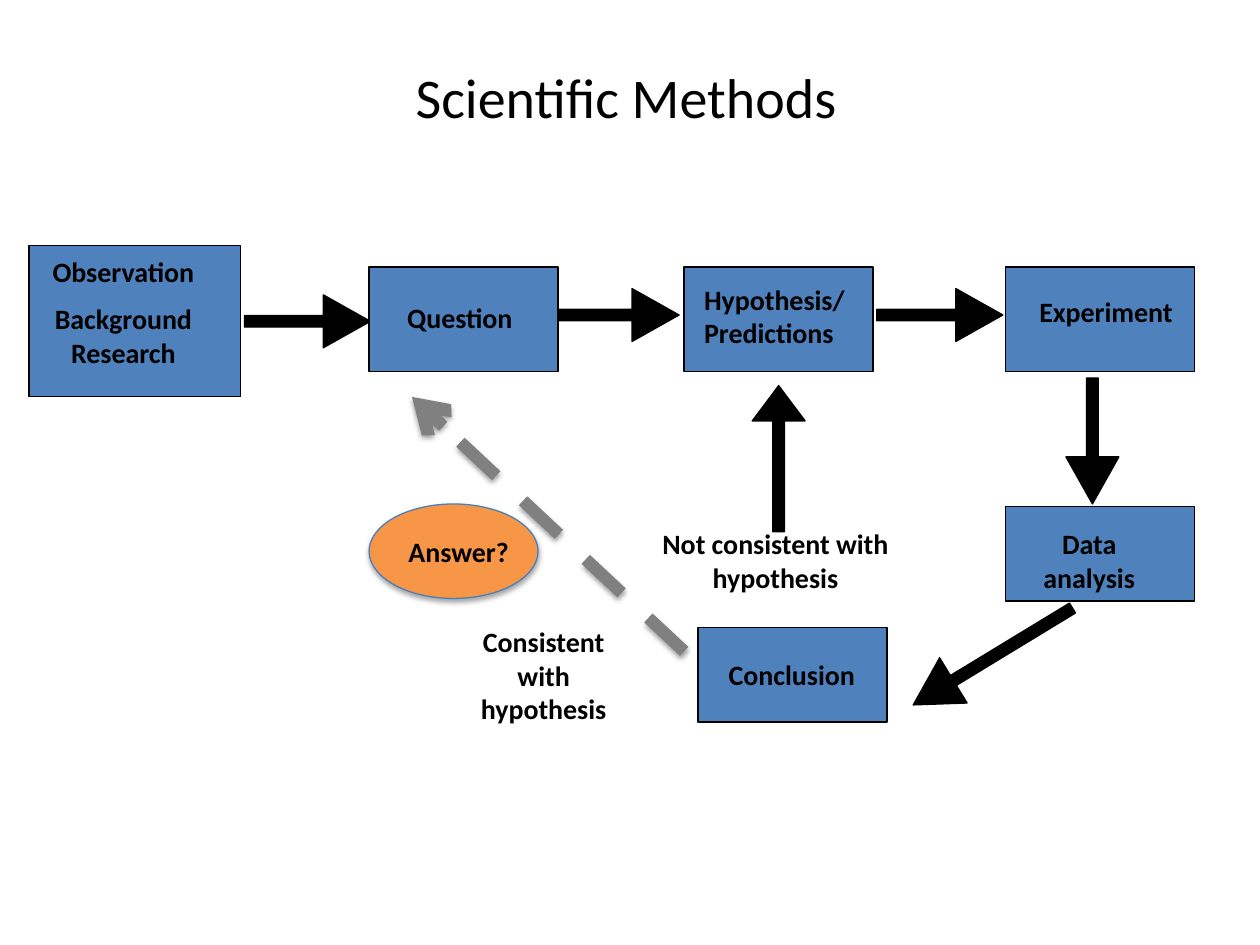
from lxml import etree
from pptx import Presentation
from pptx.dml.color import RGBColor
from pptx.enum import dml, shapes, text
from pptx.oxml import ns
from pptx import util as u

PX = 9144
FONT = "Calibri"
COLORS = {"ink": "000000", "stage": "4F81BD", "answer": "F79646",
          "answer_edge": "4B7EBC", "loop": "808080"}
LEFT, CENTER = text.PP_ALIGN.LEFT, text.PP_ALIGN.CENTER

STAGES = [
    ((23, 195, 168, 120), ["Observation", "Background Research"], (0, 2, 150, 104), CENTER),
    ((293, 212, 150, 83), ["Question"], (-3, 22, 150, 37), CENTER),
    ((543, 212, 150, 83), ["Hypothesis/Predictions"], (6, 7, 150, 64), LEFT),
    ((798, 212, 150, 83), ["Experiment"], (17, 17, 150, 37), LEFT),
    ((798, 402, 150, 75), ["Data analysis"], (0, 11, 133, 64), CENTER),
    ((554, 498, 150, 75), ["Conclusion"], (8, 19, 133, 37), CENTER),
]
ARROWS = [
    ((194, 234, 100, 42), 0, 0.889),
    ((439, 229, 100, 42), 0, 0.889),
    ((696, 229, 100, 42), 0, 0.889),
    ((817, 329, 100, 42), 90, 0.889),
    ((714, 500, 148, 42), 148.7, 0.889),
    ((560, 343, 116, 42), 270, 0.667),
]
CAPTIONS = [
    ((474, 413, 283, 64), "Not consistent with hypothesis"),
    ((351, 491, 161, 91), "Consistent with hypothesis"),
]


def emu(lengths):
    """Turn px lengths into EMU."""
    return [u.Emu(length * PX) for length in lengths]


def inside(box, part):
    """Place a part relative to the corner of its box."""
    return box[0] + part[0], box[1] + part[1], part[2], part[3]


def color(name):
    """Look up a named colour."""
    return RGBColor.from_string(COLORS[name])


def add_label(page, box, lines, align=CENTER, size=16, bold=True):
    """Add a text box with one paragraph for each line."""
    frame = page.shapes.add_textbox(*emu(box)).text_frame
    frame.word_wrap = True
    frame.auto_size = text.MSO_AUTO_SIZE.SHAPE_TO_FIT_TEXT
    for index, line in enumerate(lines):
        para = frame.add_paragraph() if index else frame.paragraphs[0]
        para.alignment = align
        if index:
            para.space_before = u.Pt(size / 2)
        span = para.add_run()
        span.text = line
        span.font.name, span.font.size, span.font.bold = FONT, u.Pt(size), bold
        span.font.color.rgb = color("ink")


def add_figure(page, kind, box, fill, edge="ink"):
    """Add a filled preset shape with a thin outline."""
    figure = page.shapes.add_shape(kind, *emu(box))
    figure.shadow.inherit = False
    figure.fill.solid()
    figure.fill.fore_color.rgb = color(fill)
    figure.line.color.rgb = color(edge)
    figure.line.width = u.Pt(0.75)
    return figure


def add_shadow(figure, opacity, distance):
    """Cast a soft shadow straight down."""
    properties = figure._element.spPr
    effects = properties.find(ns.qn("a:effectLst"))
    if effects is None:
        effects = etree.SubElement(properties, ns.qn("a:effectLst"))
    shadow = etree.SubElement(effects, ns.qn("a:outerShdw"), blurRad=str(u.Pt(3.1)),
                              dist=str(u.Pt(distance)), dir="5400000", rotWithShape="0")
    tint = etree.SubElement(shadow, ns.qn("a:srgbClr"), val=COLORS["ink"])
    etree.SubElement(tint, ns.qn("a:alpha"), val=str(opacity * 1000))


def add_stage(page, box, lines, label, align):
    """Add a step of the method with its label."""
    add_figure(page, shapes.MSO_SHAPE.RECTANGLE, box, "stage")
    add_label(page, inside(box, label), lines, align)


def add_arrow(page, box, angle, head):
    """Add a block arrow between two steps."""
    arrow = add_figure(page, shapes.MSO_SHAPE.RIGHT_ARROW, box, "ink")
    arrow.adjustments[0], arrow.adjustments[1] = 0.22, head
    arrow.rotation = angle


def add_loop(page, box):
    """Add the dashed arrow from the lower right to the upper left of a box."""
    left, top, width, height = box
    loop = page.shapes.add_connector(shapes.MSO_CONNECTOR.STRAIGHT,
                                     *emu((left + width, top + height, left, top)))
    loop.line.color.rgb = color("loop")
    loop.line.width = u.Pt(7)
    loop.line.dash_style = dml.MSO_LINE.DASH
    etree.SubElement(loop.line._get_or_add_ln(), ns.qn("a:tailEnd"), type="arrow")
    add_shadow(loop, 38, 1.6)


def add_answer(page, box):
    """Add the answer ellipse with its label."""
    ellipse = add_figure(page, shapes.MSO_SHAPE.OVAL, box, "answer", "answer_edge")
    add_shadow(ellipse, 35, 1.8)
    add_label(page, inside(box, (21, 19, 100, 37)), ["Answer?"])


def main():
    """Build the slide and save it."""
    deck = Presentation()
    deck.slide_width, deck.slide_height = emu((1000, 750))
    page = deck.slides.add_slide(deck.slide_layouts[6])
    add_label(page, (276, 45, 442, 63), ["Scientific Methods"], size=32, bold=False)
    for arrow in ARROWS:
        add_arrow(page, *arrow)
    for stage in STAGES:
        add_stage(page, *stage)
    for box, caption in CAPTIONS:
        add_label(page, box, [caption])
    add_loop(page, (327, 315, 216, 202))
    add_answer(page, (293, 400, 134, 75))
    deck.save("out.pptx")


if __name__ == "__main__":
    main()
